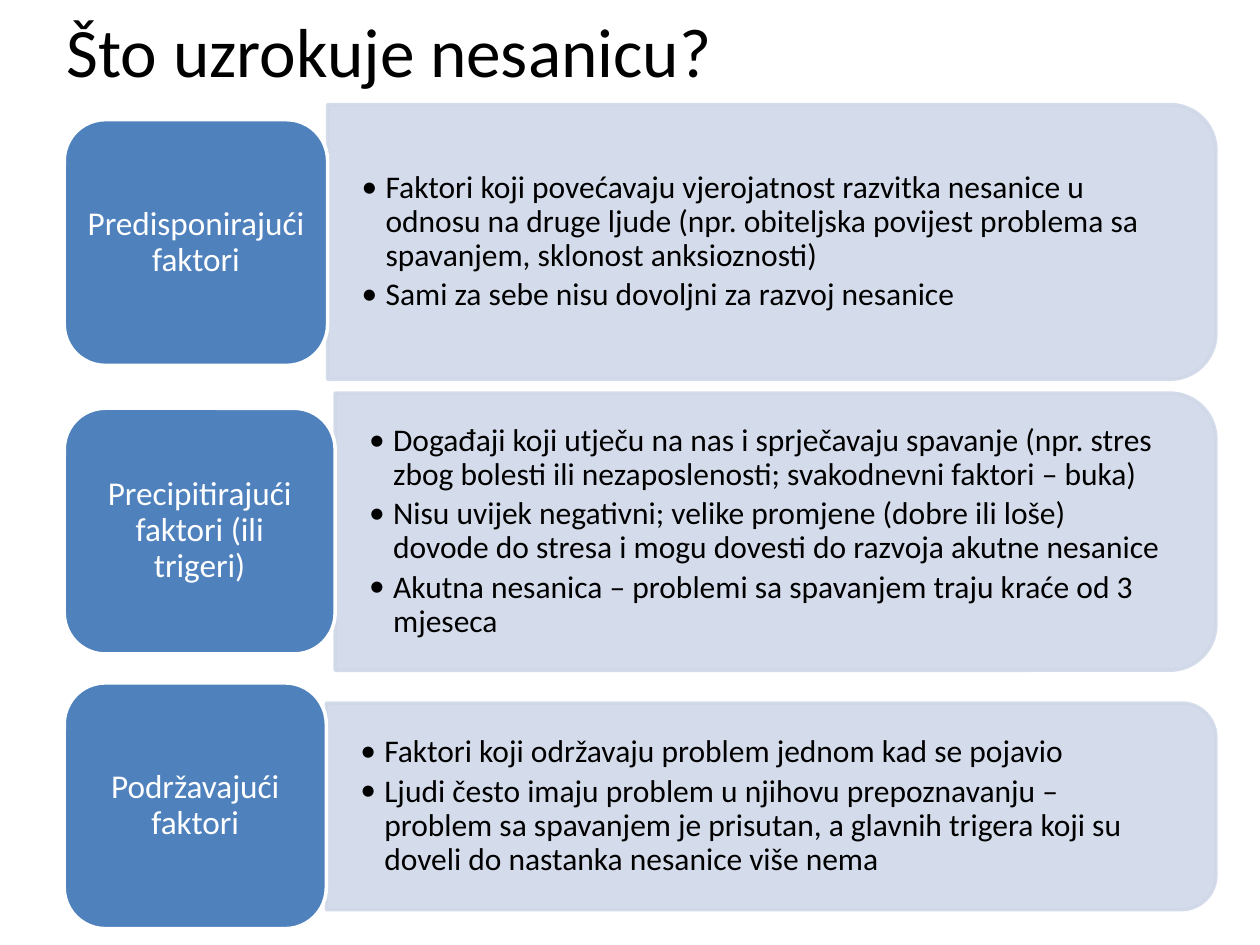
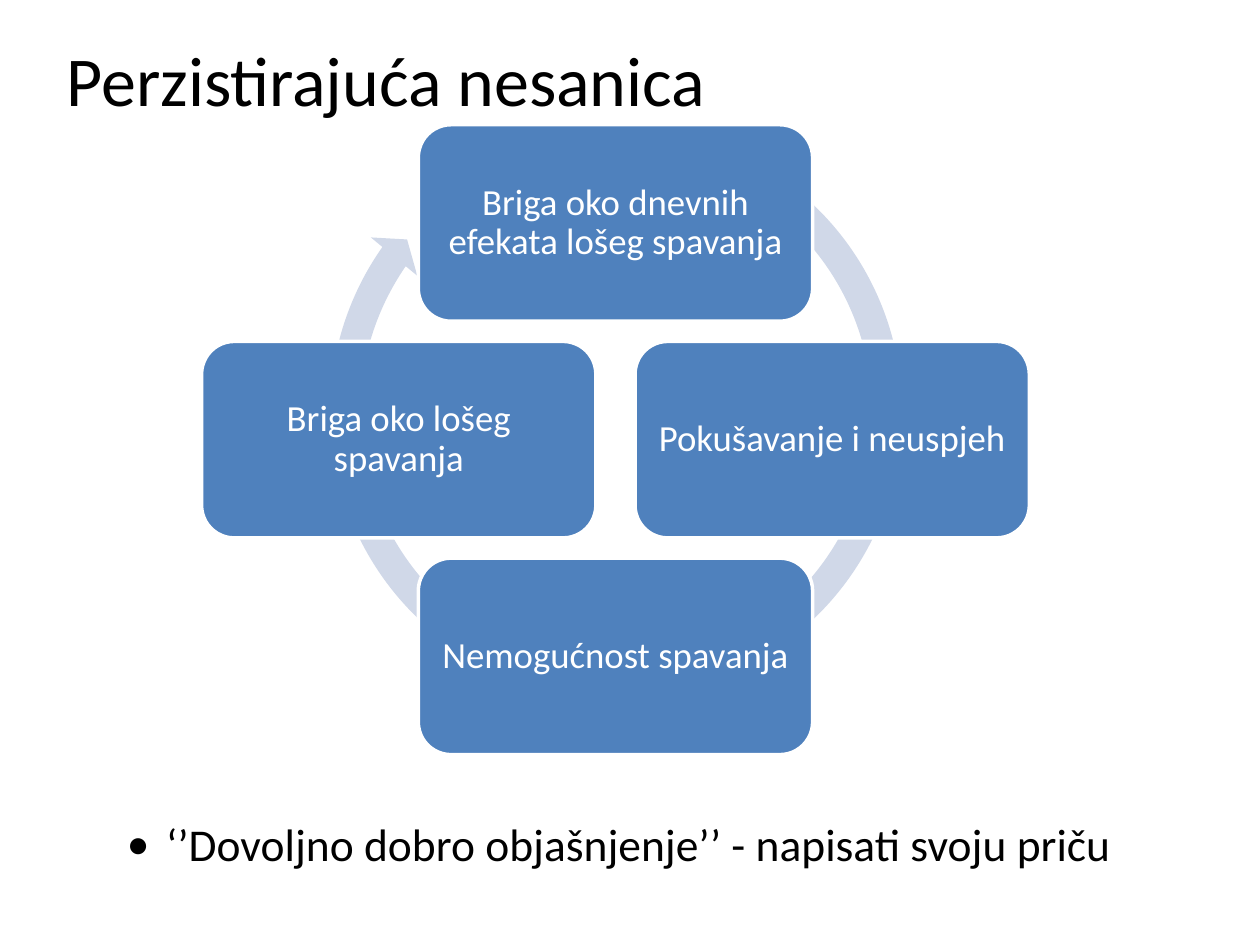
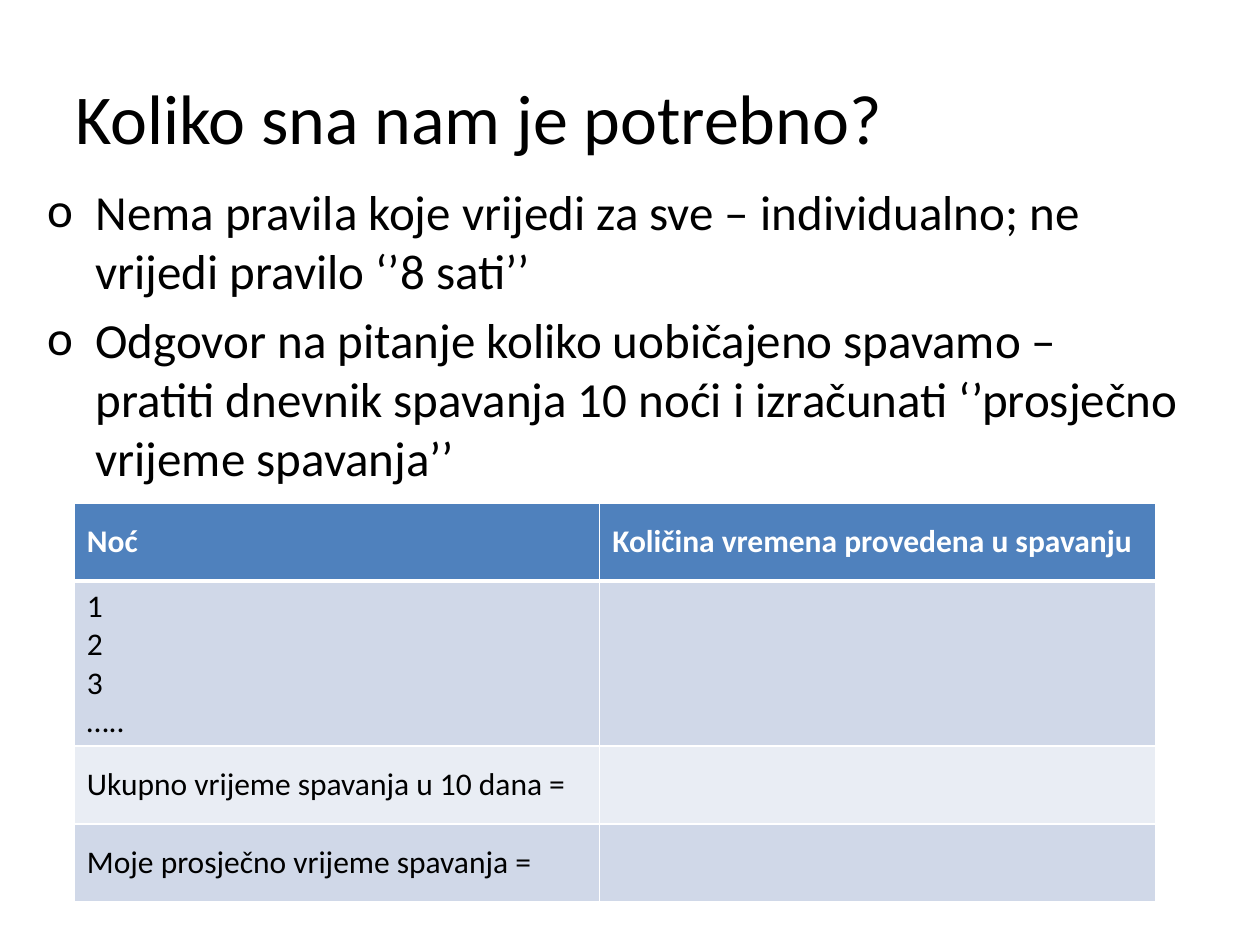
import pptx
import pptx.util
import pptx.dml.color
import pptx.enum.shapes
import pptx.enum.text
import pptx.oxml
import pptx.oxml.ns
import lxml.etree

Inches = pptx.util.Inches
Pt = pptx.util.Pt
Shape = pptx.enum.shapes.MSO_SHAPE
Align = pptx.enum.text.PP_ALIGN
Anchor = pptx.enum.text.MSO_ANCHOR
Color = pptx.dml.color.RGBColor
qn = pptx.oxml.ns.qn


class Theme:
    font = "Calibri"
    black = Color.from_string("000000")
    white = Color.from_string("FFFFFF")
    blue = Color.from_string("4F81BD")
    pale = Color.from_string("D0D8E8")
    paler = Color.from_string("E9EDF4")
    title_size = 40
    tight_title_size = 39.6
    body_size = 28
    note_size = 26
    node_size = 21
    label_size = 19
    detail_size = 18


def write_text(frame, lines, size, color=Theme.black, bullet="", indent=0, align=Align.LEFT,
               spacing=1, before=0, after=0, bold=False, anchor=Anchor.MIDDLE):
    frame.word_wrap = True
    frame.vertical_anchor = anchor
    for index, line in enumerate(lines):
        para = frame.add_paragraph() if index else frame.paragraphs[0]
        para.text = line
        para.alignment = align
        para.line_spacing = spacing
        para.space_before = Pt(before)
        para.space_after = Pt(after)
        if bullet:
            properties = para._p.get_or_add_pPr()
            properties.set("marL", str(Inches(indent)))
            properties.set("indent", str(-Inches(indent)))
            lxml.etree.SubElement(properties, qn("a:buFont")).set("typeface", Theme.font)
            lxml.etree.SubElement(properties, qn("a:buChar")).set("char", bullet)
        para.font.name = Theme.font
        para.font.size = Pt(size)
        para.font.bold = bold
        para.font.color.rgb = color


def add_block(page, kind, left, top, width, height, fill, line=None):
    block = page.shapes.add_shape(kind, Inches(left), Inches(top), Inches(width), Inches(height))
    block.shadow.inherit = False
    block.fill.solid()
    block.fill.fore_color.rgb = fill
    block.text_frame.margin_left = block.text_frame.margin_right = Inches(0.08)
    if line is None:
        block.line.fill.background()
    else:
        block.line.color.rgb = line
        block.line.width = Pt(2)
    return block


deck = pptx.Presentation()
deck.slide_width = Inches(10)
deck.slide_height = Inches(7.5)

titles = [
    ("Što uzrokuje nesanicu?", 0.43, 0, 0.79, Theme.tight_title_size),
    ("Perzistirajuća nesanica", 0.43, 0, 1.25, Theme.title_size),
    ("Koliko sna nam je potrebno?", 0.5, 0.3, 1.25, Theme.title_size),
]
pages = []
for title, left, top, height, size in titles:
    page = deck.slides.add_slide(deck.slide_layouts[6])
    box = page.shapes.add_textbox(Inches(left), Inches(top), Inches(9), Inches(height))
    write_text(box.text_frame, [title], size)
    pages.append(page)
causes_page, cycle_page, sleep_page = pages

factors = [
    ("Predisponirajući faktori", 0.95, 2.09, 0.83, 2.18, [
        "Faktori koji povećavaju vjerojatnost razvitka nesanice u odnosu na druge ljude "
        "(npr. obiteljska povijest problema sa spavanjem, sklonost anksioznosti)",
        "Sami za sebe nisu dovoljni za razvoj nesanice"]),
    ("Precipitirajući faktori (ili trigeri)", 3.24, 2.15, 3.12, 2.2, [
        "Događaji koji utječu na nas i sprječavaju spavanje (npr. stres zbog bolesti ili "
        "nezaposlenosti; svakodnevni faktori – buka)",
        "Nisu uvijek negativni; velike promjene (dobre ili loše) dovode do stresa i mogu "
        "dovesti do razvoja akutne nesanice",
        "Akutna nesanica – problemi sa spavanjem traju kraće od 3 mjeseca"]),
    ("Podržavajući faktori", 5.42, 2.08, 5.58, 1.64, [
        "Faktori koji održavaju problem jednom kad se pojavio",
        "Ljudi često imaju problem u njihovu prepoznavanju – problem sa spavanjem je "
        "prisutan, a glavnih trigera koji su doveli do nastanka nesanice više nema"]),
]
label_left, panel_right = 0.51, 9.65
for name, label_top, label_width, panel_top, panel_height, details in factors:
    panel_left = label_left + label_width
    panel_width = panel_right - panel_left
    shift = (panel_width - panel_height) / 2
    panel = add_block(causes_page, Shape.ROUND_2_SAME_RECTANGLE, panel_left + shift,
                      panel_top - shift, panel_height, panel_width, Theme.pale, Theme.pale)
    panel.rotation = 90
    for paint in panel._element.spPr.iter(qn("a:srgbClr")):
        lxml.etree.SubElement(paint, qn("a:alpha")).set("val", "90000")
    box = causes_page.shapes.add_textbox(Inches(panel_left), Inches(panel_top),
                                         Inches(panel_width), Inches(panel_height))
    box.text_frame.margin_left = Inches(0.27)
    box.text_frame.margin_right = Inches(0.41)
    write_text(box.text_frame, details, Theme.detail_size, bullet="•", indent=0.19,
               spacing=0.9, after=3)
    label = add_block(causes_page, Shape.ROUNDED_RECTANGLE, label_left, label_top,
                      label_width, 1.95, Theme.blue, Theme.white)
    write_text(label.text_frame, [name], Theme.label_size, Theme.white,
               align=Align.CENTER, spacing=0.9)

arrow = add_block(cycle_page, Shape.CIRCULAR_ARROW, 2.5, 0.88, 4.78, 4.78, Theme.pale)
for index, value in enumerate([0.05, 2.73, 128.99, 179.85, 0.05]):
    arrow.adjustments[index] = value

steps = [
    ("Briga oko dnevnih efekata lošeg spavanja", 0, -1),
    ("Pokušavanje i neuspjeh", 1, 0),
    ("Nemogućnost spavanja", 0, 1),
    ("Briga oko lošeg spavanja", -1, 0),
]
step_distance = 1.72
for name, across, down in steps:
    step = add_block(cycle_page, Shape.ROUNDED_RECTANGLE, 3.32 + across * step_distance,
                     2.71 + down * step_distance, 3.13, 1.56, Theme.blue, Theme.white)
    write_text(step.text_frame, [name], Theme.node_size, Theme.white,
               align=Align.CENTER, spacing=0.9)

box = cycle_page.shapes.add_textbox(Inches(0.91), Inches(6.43), Inches(8.3), Inches(0.84))
write_text(box.text_frame, ["‘’Dovoljno dobro objašnjenje’’ - napisati svoju priču"],
           Theme.note_size, bullet="•", indent=0.31, anchor=Anchor.TOP)

box = sleep_page.shapes.add_textbox(Inches(0.28), Inches(1.39), Inches(9.22), Inches(2.55))
write_text(box.text_frame, [
    "Nema pravila koje vrijedi za sve – individualno; ne vrijedi pravilo ‘’8 sati’’",
    "Odgovor na pitanje koliko uobičajeno spavamo – pratiti dnevnik spavanja 10 noći i "
    "izračunati ‘’prosječno vrijeme spavanja’’",
], Theme.body_size, bullet="o", indent=0.38, before=6, anchor=Anchor.TOP)

diary_rows = [
    (0.62, Theme.blue, [["Noć"], ["Količina vremena provedena u spavanju"]]),
    (1.31, Theme.pale, [["1", "2", "3", "….."], []]),
    (0.62, Theme.paler, [["Ukupno vrijeme spavanja u 10 dana ="], []]),
    (0.62, Theme.pale, [["Moje prosječno vrijeme spavanja ="], []]),
]
diary = sleep_page.shapes.add_table(len(diary_rows), 2, Inches(0.59), Inches(3.99),
                                    Inches(8.58), Inches(3.17)).table
for column, width in zip(diary.columns, [4.17, 4.41]):
    column.width = Inches(width)
for row, (height, fill, texts) in enumerate(diary_rows):
    diary.rows[row].height = Inches(height)
    is_header = row == 0
    borders = {"a:lnL": 1, "a:lnR": 1, "a:lnT": 3 if row == 1 else 1, "a:lnB": 3 if is_header else 1}
    for column, lines in enumerate(texts):
        cell = diary.cell(row, column)
        for side, width in borders.items():
            border = lxml.etree.SubElement(cell._tc.get_or_add_tcPr(), qn(side))
            border.set("w", str(Pt(width)))
            paint = lxml.etree.SubElement(border, qn("a:solidFill"))
            lxml.etree.SubElement(paint, qn("a:srgbClr")).set("val", str(Theme.white))
        cell.fill.solid()
        cell.fill.fore_color.rgb = fill
        cell.vertical_anchor = Anchor.MIDDLE
        write_text(cell.text_frame, lines, Theme.detail_size,
                   Theme.white if is_header else Theme.black, bold=is_header)

deck.save("out.pptx")
